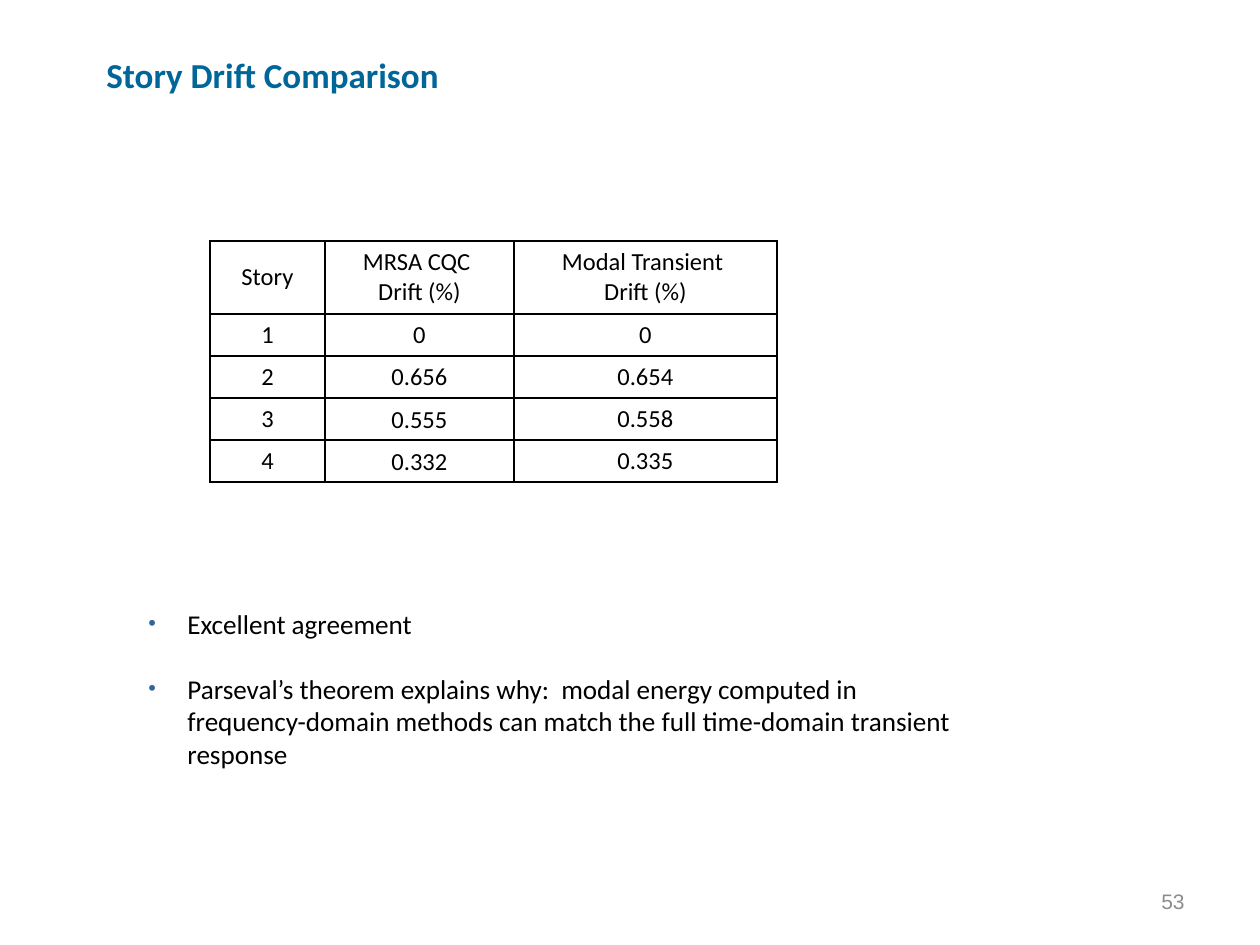
from lxml import etree
from pptx import Presentation
from pptx.dml.color import RGBColor
from pptx.enum.text import MSO_ANCHOR, PP_ALIGN
from pptx.oxml.ns import qn
from pptx.util import Emu, Pt

# Content
TITLE = "Story Drift Comparison"
PAGE_NUMBER = "53"
DRIFTS = [
    ("Story", "MRSA CQC \nDrift (%)", "Modal Transient \nDrift (%)"),
    ("1", "0", "0"),
    ("2", "0.656", "0.654"),
    ("3", "0.555", "0.558"),
    ("4", "0.332", "0.335"),
]
FINDINGS = [
    "Excellent agreement",
    "Parseval’s theorem explains why:  modal energy computed in "
    "frequency-domain methods can match the full time-domain transient response",
]

# Format
BLACK = RGBColor(0x00, 0x00, 0x00)
TITLE_BLUE = RGBColor(0x00, 0x66, 0x99)
BULLET_BLUE = RGBColor(0x33, 0x66, 0x99)
GREY = RGBColor(0x8C, 0x8C, 0x8C)
LEFT, CENTER, RIGHT = PP_ALIGN.LEFT, PP_ALIGN.CENTER, PP_ALIGN.RIGHT
TOP, MIDDLE = MSO_ANCHOR.TOP, MSO_ANCHOR.MIDDLE

# Layout in px, 126 to the inch
SCALE = 914400 // 126
COLUMN_WIDTHS = [115, 189, 263]
HEADER_HEIGHT, ROW_HEIGHT = 73, 42
TIGHT_COLUMN = 1
BULLET_INDENT = 39


def px(length):
    return Emu(length * SCALE)


def write(frame, text, size=14, color=BLACK, font="Calibri", bold=False,
          align=LEFT, bullet=None, gap=0):
    """Write one paragraph per line of text, gap points apart."""
    for index, line in enumerate(text.split("\n")):
        paragraph = frame.paragraphs[0] if index == 0 else frame.add_paragraph()
        if bullet:
            add_bullet(paragraph, bullet)
        paragraph.alignment = align
        if index and gap:
            paragraph.space_before = Pt(gap)
        run = paragraph.add_run()
        run.text = line
        run.font.name = font
        run.font.size = Pt(size)
        run.font.bold = bold
        run.font.color.rgb = color


def add_bullet(paragraph, color):
    properties = paragraph._p.get_or_add_pPr()
    properties.set("marL", str(px(BULLET_INDENT)))
    properties.set("indent", str(-px(BULLET_INDENT)))
    bullet_color = etree.SubElement(properties, qn("a:buClr"))
    etree.SubElement(bullet_color, qn("a:srgbClr"), val=str(color))
    etree.SubElement(properties, qn("a:buSzPct"), val="80000")
    etree.SubElement(properties, qn("a:buFont"), typeface="Arial")
    etree.SubElement(properties, qn("a:buChar"), char="•")


def add_text(slide, box, text, anchor=MIDDLE, **text_format):
    frame = slide.shapes.add_textbox(*map(px, box)).text_frame
    frame.word_wrap = True
    frame.vertical_anchor = anchor
    write(frame, text, **text_format)


def add_borders(cell):
    properties = cell._tc.get_or_add_tcPr()
    for position, side in enumerate(("lnL", "lnR", "lnT", "lnB")):
        border = etree.Element(qn(f"a:{side}"), w=str(Pt(1)))
        fill = etree.SubElement(border, qn("a:solidFill"))
        etree.SubElement(fill, qn("a:srgbClr"), val=str(BLACK))
        properties.insert(position, border)


def add_drift_table(slide, left, top):
    heights = [HEADER_HEIGHT] + [ROW_HEIGHT] * (len(DRIFTS) - 1)
    table = slide.shapes.add_table(
        len(DRIFTS), len(COLUMN_WIDTHS), px(left), px(top),
        px(sum(COLUMN_WIDTHS)), px(sum(heights))).table
    table.first_row = table.horz_banding = False
    for column, width in zip(table.columns, COLUMN_WIDTHS):
        column.width = px(width)
    for row, height in zip(table.rows, heights):
        row.height = px(height)
    for r, drift_row in enumerate(DRIFTS):
        for c, text in enumerate(drift_row):
            cell = table.cell(r, c)
            cell.fill.background()
            cell.vertical_anchor = MIDDLE
            if r and c == TIGHT_COLUMN:
                cell.margin_left = cell.margin_right = cell.margin_top = px(1)
                cell.margin_bottom = 0
            add_borders(cell)
            write(cell.text_frame, text, align=CENTER)


def main():
    deck = Presentation()
    deck.slide_width, deck.slide_height = px(1260), px(945)
    slide = deck.slides.add_slide(deck.slide_layouts[6])

    # Page number and title
    add_text(slide, (903, 876, 294, 50), PAGE_NUMBER, size=12, color=GREY,
             font="Arial", align=RIGHT)
    add_text(slide, (94, 27, 546, 94), TITLE, size=20, color=TITLE_BLUE, bold=True)

    # Drift table
    add_drift_table(slide, 210, 241)

    # Findings, one empty line's height apart
    add_text(slide, (136, 601, 829, 210), "\n".join(FINDINGS), anchor=TOP,
             size=15.5, bullet=BULLET_BLUE, gap=18.5)

    deck.save("out.pptx")


if __name__ == "__main__":
    main()
